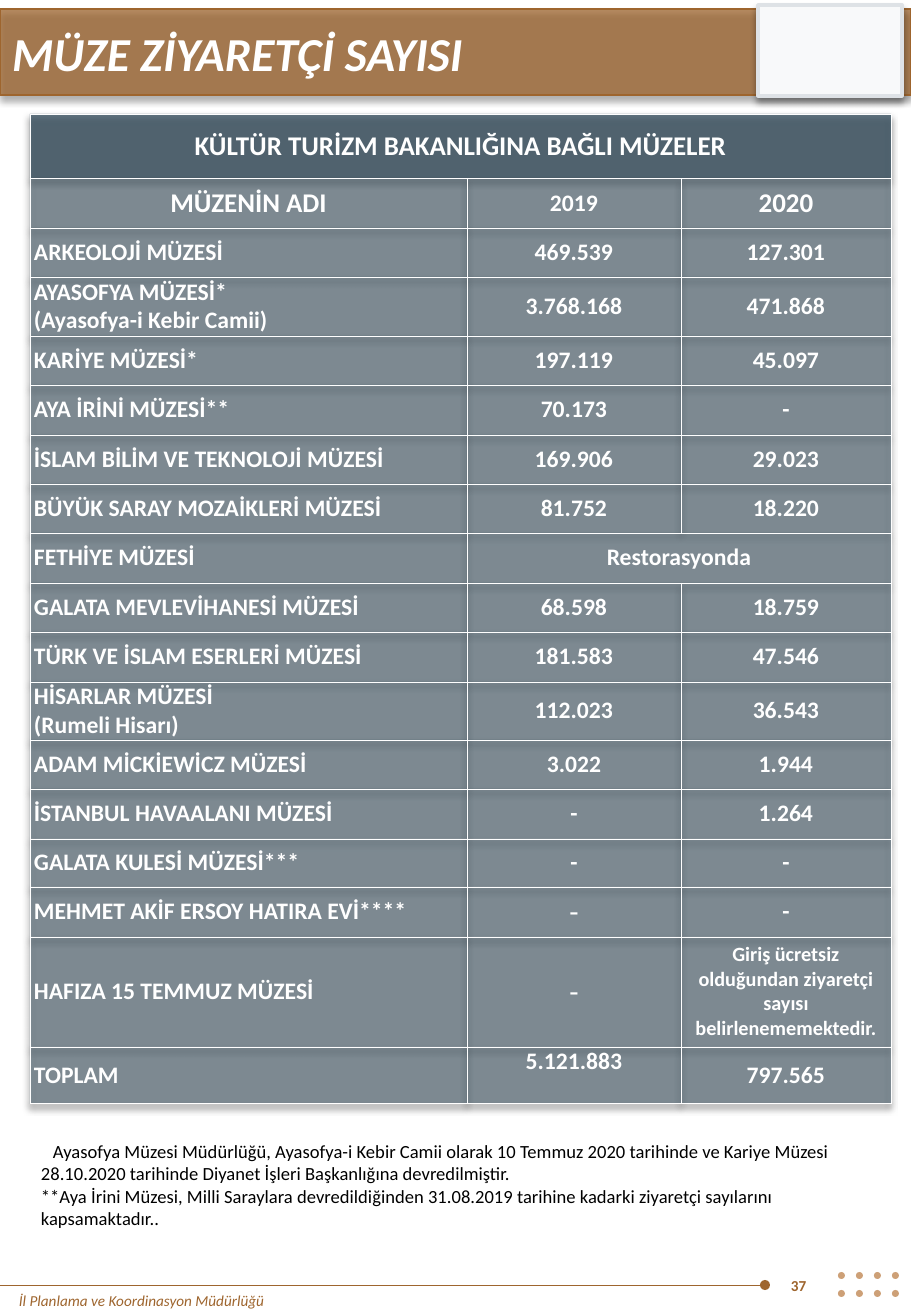
from lxml.etree import SubElement
from pptx import Presentation
from pptx.dml.color import RGBColor
from pptx.enum.shapes import MSO_CONNECTOR, MSO_SHAPE
from pptx.enum.text import MSO_ANCHOR as Anchor, PP_ALIGN as Align
from pptx.oxml.ns import qn
from pptx.util import Pt

EMU_PER_PX = 914400 / 121.5
FONT = "Calibri"
COLORS = {"brown": "9E652E", "dot": "CDA077", "slate": "2F4858", "white": "FFFFFF",
          "panel": "F8F9FA", "panel_line": "DEE2E6", "black": "000000"}

TITLE = "MÜZE ZİYARETÇİ SAYISI"
FOOTER = "İl Planlama ve Koordinasyon Müdürlüğü"
PAGE_NUMBER = "37"
NOTES = [
    "Ayasofya Müzesi Müdürlüğü, Ayasofya-i Kebir Camii olarak 10 Temmuz 2020 tarihinde ve "
    "Kariye Müzesi 28.10.2020 tarihinde Diyanet İşleri Başkanlığına devredilmiştir.",
    "**Aya İrini Müzesi, Milli Saraylara devredildiğinden 31.08.2019 tarihine kadarki "
    "ziyaretçi sayılarını kapsamaktadır..",
]
ROWS = [
    ("KÜLTÜR TURİZM BAKANLIĞINA BAĞLI MÜZELER", None, None),
    ("MÜZENİN ADI", "2019", "2020"),
    ("ARKEOLOJİ MÜZESİ", "469.539", "127.301"),
    ("AYASOFYA MÜZESİ*\n(Ayasofya-i Kebir Camii)", "3.768.168", "471.868"),
    ("KARİYE MÜZESİ*", "197.119", "45.097"),
    ("AYA İRİNİ MÜZESİ**", "70.173", "-"),
    ("İSLAM BİLİM VE TEKNOLOJİ MÜZESİ", "169.906", "29.023"),
    ("BÜYÜK SARAY MOZAİKLERİ MÜZESİ", "81.752", "18.220"),
    ("FETHİYE MÜZESİ", "Restorasyonda", None),
    ("GALATA MEVLEVİHANESİ MÜZESİ", "68.598", "18.759"),
    ("TÜRK VE İSLAM ESERLERİ MÜZESİ", "181.583", "47.546"),
    ("HİSARLAR MÜZESİ\n(Rumeli Hisarı)", "112.023", "36.543"),
    ("ADAM MİCKİEWİCZ MÜZESİ", "3.022", "1.944"),
    ("İSTANBUL HAVAALANI MÜZESİ", "-", "1.264"),
    ("GALATA KULESİ MÜZESİ***", "-", "-"),
    ("MEHMET AKİF ERSOY HATIRA EVİ****", "-", "-"),
    ("HAFIZA 15 TEMMUZ MÜZESİ", "-",
     "Giriş ücretsiz olduğundan ziyaretçi sayısı belirlenememektedir."),
    ("TOPLAM", "5.121.883", "797.565"),
]
COLUMN_WIDTHS = [437, 214, 210]
ROW_HEIGHTS = [64, 50, 49, 59, 49, 50, 49, 49, 50, 49, 50, 58, 49, 50, 48, 50, 110, 57]
CELL_SIZES = {(0, 0): 16, (1, 0): 16, (1, 2): 16, (15, 1): 18, (16, 1): 18, (16, 2): 12}
LIGHT_CELLS = {(15, 1), (16, 1)}


def px(value):
    return round(value * EMU_PER_PX)


def box(*lengths):
    return [px(length) for length in lengths]


def rgb(name):
    return RGBColor.from_string(COLORS[name])


def paint(fill, color):
    fill.solid()
    fill.fore_color.rgb = rgb(color)


def set_alpha(properties, percent):
    color = properties.find(qn("a:solidFill")).find(qn("a:srgbClr"))
    SubElement(color, qn("a:alpha"), val=str(percent * 1000))


def add_shadow(effects):
    shadow = SubElement(effects, qn("a:outerShdw"), blurRad=str(Pt(4)), dist=str(Pt(3)),
                        dir="5400000", algn="t", rotWithShape="0")
    color = SubElement(shadow, qn("a:srgbClr"), val=COLORS["black"])
    SubElement(color, qn("a:alpha"), val="40000")


def style(paragraph, size, color, bold=False, italic=False, align=Align.LEFT):
    paragraph.alignment = align
    font = paragraph.font
    font.name, font.size, font.bold, font.italic = FONT, Pt(size), bold, italic
    font.color.rgb = rgb(color)


def add_box(slide, kind, place, fill, line=None, width=1):
    shape = slide.shapes.add_shape(kind, *box(*place))
    shape.shadow.inherit = False
    paint(shape.fill, fill)
    if line:
        shape.line.color.rgb = rgb(line)
        shape.line.width = Pt(width)
    else:
        shape.line.fill.background()
    return shape


def add_label(slide, place, text, anchor=Anchor.TOP, **look):
    frame = slide.shapes.add_textbox(*box(*place)).text_frame
    frame.word_wrap = True
    frame.vertical_anchor = anchor
    frame.text = text
    style(frame.paragraphs[0], 9, "brown", **look)


def add_banner(slide):
    banner = add_box(slide, MSO_SHAPE.RECTANGLE, (0, 9, 911, 86), "brown", "brown")
    set_alpha(banner.element.spPr, 75)
    panel = add_box(slide, MSO_SHAPE.RECTANGLE, (758, 5, 144, 91), "panel", "panel_line", 2)
    for shape in (banner, panel):
        add_shadow(shape.element.spPr.find(qn("a:effectLst")))
    title = slide.shapes.title
    title.left, title.top, title.width, title.height = box(0, 18, 750, 69)
    slide.shapes._spTree.append(title.element)
    title.text_frame.vertical_anchor = Anchor.TOP
    title.text_frame.text = TITLE
    style(title.text_frame.paragraphs[0], 28, "white", bold=True, italic=True)


def add_footer(slide):
    rule = slide.shapes.add_connector(MSO_CONNECTOR.STRAIGHT, *box(765, 1285, 0, 1285))
    rule.line.color.rgb = rgb("brown")
    rule.line.width = Pt(0.5)
    SubElement(rule.line._get_or_add_ln(), qn("a:headEnd"), type="oval")
    SubElement(rule.element.spPr, qn("a:effectLst"))
    for row in range(2):
        for column in range(4):
            add_box(slide, MSO_SHAPE.OVAL, (838 + 18 * column, 1272 + 18 * row, 7, 7), "dot")
    add_label(slide, (7, 1285, 570, 30), FOOTER, italic=True)
    add_label(slide, (779, 1260, 61, 51), PAGE_NUMBER, Anchor.MIDDLE, bold=True)


def fill_cell(cell, row, column, text):
    cell.margin_left = cell.margin_right = px(4)
    cell.margin_top = cell.margin_bottom = 0
    is_total_2019 = (row, column) == (len(ROWS) - 1, 1)
    cell.vertical_anchor = Anchor.TOP if is_total_2019 else Anchor.MIDDLE
    properties = cell._tc.get_or_add_tcPr()
    for side in ("a:lnL", "a:lnR", "a:lnT", "a:lnB"):
        border = SubElement(properties, qn(side), w=str(Pt(0.25)))
        SubElement(SubElement(border, qn("a:solidFill")), qn("a:srgbClr"), val=COLORS["white"])
    paint(cell.fill, "slate")
    set_alpha(properties, 50 if row else 75)
    if text:
        cell.text_frame.text = text
        align = Align.LEFT if column == 0 and row > 1 else Align.CENTER
        for paragraph in cell.text_frame.paragraphs:
            style(paragraph, CELL_SIZES.get((row, column), 14), "white",
                  bold=(row, column) not in LIGHT_CELLS, align=align)


def add_museum_table(slide):
    place = box(30, 114, sum(COLUMN_WIDTHS), sum(ROW_HEIGHTS))
    table = slide.shapes.add_table(len(ROWS), len(COLUMN_WIDTHS), *place).table
    table.first_row = table.horz_banding = False
    effects = SubElement(table._tbl.tblPr, qn("a:effectLst"))
    table._tbl.tblPr.insert(0, effects)
    add_shadow(effects)
    for column, width in zip(table.columns, COLUMN_WIDTHS):
        column.width = px(width)
    for row, (texts, height) in enumerate(zip(ROWS, ROW_HEIGHTS)):
        table.rows[row].height = px(height)
        for column, text in enumerate(texts):
            fill_cell(table.cell(row, column), row, column, text)
        if None in texts:
            table.cell(row, texts.index(None) - 1).merge(table.cell(row, len(texts) - 1))


def add_notes_box(slide):
    shape = add_box(slide, MSO_SHAPE.RECTANGLE, (29, 1129, 854, 108), "white")
    set_alpha(shape.element.spPr, 65)
    frame = shape.text_frame
    frame.word_wrap = True
    frame.vertical_anchor = Anchor.TOP
    frame.margin_top = px(11)
    frame.text = "\n".join(NOTES)
    for paragraph in frame.paragraphs:
        style(paragraph, 11, "black")
    frame.paragraphs[0]._p.get_or_add_pPr().set("indent", str(px(12)))


def main():
    presentation = Presentation()
    presentation.slide_width, presentation.slide_height = box(911, 1316)
    slide = presentation.slides.add_slide(presentation.slide_layouts[5])
    add_banner(slide)
    add_footer(slide)
    add_museum_table(slide)
    add_notes_box(slide)
    presentation.save("out.pptx")


if __name__ == "__main__":
    main()
